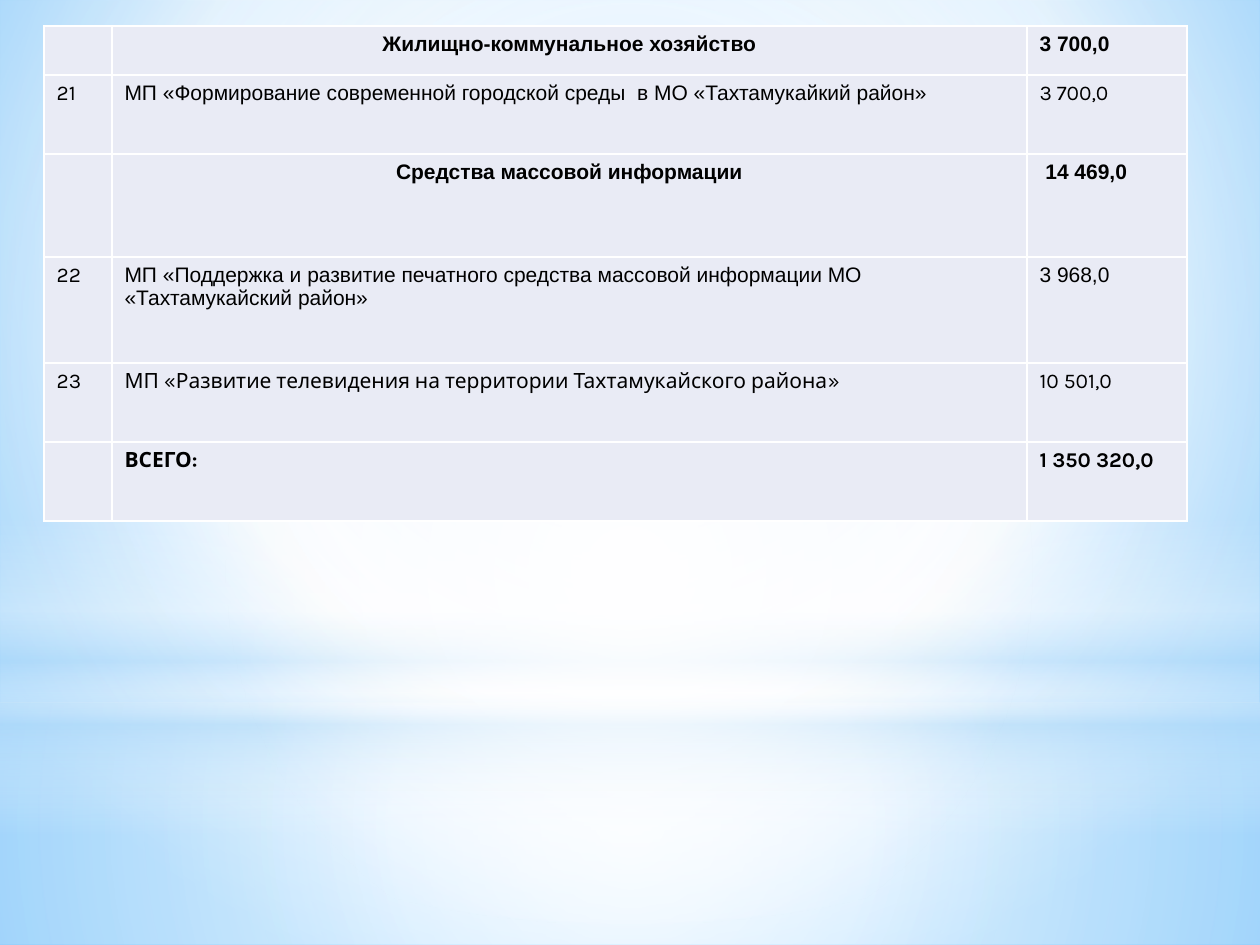
from lxml.etree import SubElement
from pptx import Presentation
from pptx.dml.color import RGBColor
from pptx.enum.shapes import MSO_SHAPE
from pptx.enum.text import PP_ALIGN
from pptx.oxml import parse_xml
from pptx.oxml.ns import nsdecls, qn
from pptx.util import Pt

PX = 914400 / 126
SLIDE_BOX = (0, 0, 1260, 945)
TABLE_BOX = (44, 26, 1143, 495)
COLORS = {"white": "FFFFFF", "haze": "B4DCFA", "sky": "9ED5FF",
          "deep": "5BB9FF", "cell": "E9EBF5", "text": "000000"}
COLUMN_WIDTHS = (68, 915, 160)
ROW_HEIGHTS = (49, 79, 103, 106, 79, 79)
CENTER = (50, 50, 50, 50)

# Number, programme, amount, fonts of the three cells, bold, heading centred
ROWS = [
    ("", "Жилищно-коммунальное хозяйство", "3 700,0",
     ("Arial", "Arial", "Arial"), True, True),
    ("21", "МП «Формирование современной городской среды  в МО «Тахтамукайкий район»",
     "3 700,0", ("Karla", "Arial", "Karla"), False, False),
    ("", "Средства массовой информации", " 14 469,0",
     ("Arial", "Arial", "Arial"), True, True),
    ("22", "МП «Поддержка и развитие печатного средства массовой информации МО "
     "«Тахтамукайский район»", "3 968,0", ("Karla", "Arial", "Arial"), False, False),
    ("23", "МП «Развитие телевидения на территории Тахтамукайского района»",
     "10 501,0", ("Karla", "Karla", "Karla"), False, False),
    ("", "ВСЕГО:", "1 350 320,0", ("Karla", "Karla", "Karla"), True, False),
]


def px(length):
    return round(length * PX)


def gradient(stops, focus=None):
    """Stops are (position, colour, opacity) in percent; without a focus the run is downward."""
    stop_xml = "".join(
        f'<a:gs pos="{position * 1000}"><a:srgbClr val="{COLORS[color]}">'
        f'<a:alpha val="{opacity * 1000}"/></a:srgbClr></a:gs>'
        for position, color, opacity in stops)
    if focus:
        sides = " ".join(f'{side}="{value * 1000}"' for side, value in zip("ltrb", focus))
        direction = f'<a:path path="circle"><a:fillToRect {sides}/></a:path>'
    else:
        direction = '<a:lin ang="5400000" scaled="0"/>'
    return parse_xml(f'<a:gradFill {nsdecls("a")} rotWithShape="1">'
                     f'<a:gsLst>{stop_xml}</a:gsLst>{direction}</a:gradFill>')


def replace_solid_fill(properties, fill):
    properties.replace(properties.find(qn("a:solidFill")), fill)


def add_glow(slide, kind, box, fill):
    shape = slide.shapes.add_shape(kind, *map(px, box))
    shape.shadow.inherit = False
    shape.line.fill.background()
    shape.fill.solid()
    replace_solid_fill(shape.element.spPr, fill)


def add_backdrop(slide, box):
    left, top, width, height = box
    slide.background.fill.solid()
    replace_solid_fill(
        slide.element.find(".//" + qn("p:bgPr")),
        gradient([(0, "sky", 100), (60, "white", 100), (100, "deep", 100)], (20, 10, 20, 60)))
    horizon = 703
    add_glow(slide, MSO_SHAPE.RECTANGLE, (left, top + horizon, width, height - horizon),
             gradient([(0, "white", 91), (37, "white", 76), (100, "haze", 79)], CENTER))
    add_glow(slide, MSO_SHAPE.RECTANGLE, (left, top, width, horizon),
             gradient([(0, "white", 89), (48, "white", 62), (100, "haze", 79)], CENTER))
    add_glow(slide, MSO_SHAPE.RECTANGLE, (left, top + 519, width, 315),
             gradient([(0, "white", 0), (29, "white", 30), (45, "haze", 40),
                       (55, "white", 26), (65, "haze", 60), (100, "white", 0)]))
    add_glow(slide, MSO_SHAPE.OVAL, (left, top + 220, width, horizon),
             gradient([(0, "white", 100), (56, "white", 0)], CENTER))


def add_borders(cell):
    properties = cell._tc.get_or_add_tcPr()
    for index, side in enumerate(("lnL", "lnR", "lnT", "lnB")):
        properties.insert(index, parse_xml(
            f'<a:{side} {nsdecls("a")} w="12700"><a:solidFill>'
            f'<a:srgbClr val="{COLORS["white"]}"/></a:solidFill></a:{side}>'))


def fill_cell(cell, text, font_name, bold, centered):
    cell.fill.solid()
    cell.fill.fore_color.rgb = RGBColor.from_string(COLORS["cell"])
    add_borders(cell)
    paragraph = cell.text_frame.paragraphs[0]
    if not text:
        SubElement(paragraph._p, qn("a:endParaRPr"), sz="1200")
        return
    paragraph.text = text
    paragraph.alignment = PP_ALIGN.CENTER if centered else PP_ALIGN.LEFT
    font = paragraph.runs[0].font
    font.name, font.size, font.bold = font_name, Pt(12), bold
    font.color.rgb = RGBColor.from_string(COLORS["text"])


def add_programme_table(slide, box):
    table = slide.shapes.add_table(len(ROWS), len(COLUMN_WIDTHS), *map(px, box)).table
    table.first_row = table.horz_banding = False
    for column, width in zip(table.columns, COLUMN_WIDTHS):
        column.width = px(width)
    for row, height, (*texts, fonts, bold, centered) in zip(table.rows, ROW_HEIGHTS, ROWS):
        row.height = px(height)
        for index, (cell, text, font_name) in enumerate(zip(row.cells, texts, fonts)):
            fill_cell(cell, text, font_name, bold, centered and index == 1)


def main():
    presentation = Presentation()
    presentation.slide_width, presentation.slide_height = map(px, SLIDE_BOX[2:])
    slide = presentation.slides.add_slide(presentation.slide_layouts[6])
    add_backdrop(slide, SLIDE_BOX)
    add_programme_table(slide, TABLE_BOX)
    presentation.save("out.pptx")


if __name__ == "__main__":
    main()
